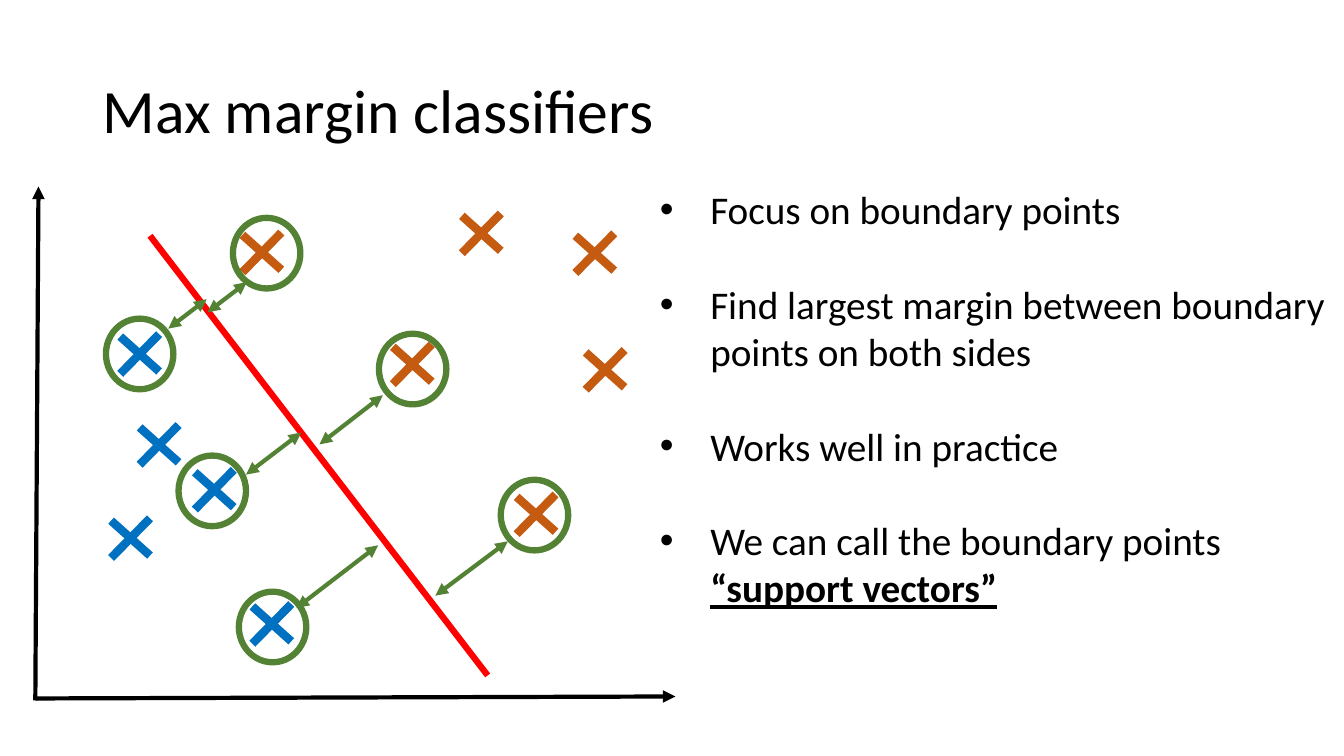
import pptx
import pptx.util
import pptx.dml.color
import pptx.enum.shapes
import pptx.enum.text
import pptx.oxml
import pptx.oxml.ns

Cm, Pt = pptx.util.Cm, pptx.util.Pt
TITLE = "Max margin classifiers"
POINTS = [
    "Focus on boundary points",
    "Find largest margin between boundary points on both sides",
    "Works well in practice",
    "We can call the boundary points",
]
TERM = "“support vectors”"
COLORS = {"ink": "000000", "orange": "C55A11", "blue": "0070C0",
          "green": "548235", "red": "FF0000"}
MARKS = {
    "orange": [(14.99, 6.38), (6.6, 6.36), (10.39, 9.18), (13.51, 12.96),
               (12.13, 5.88), (15.25, 9.32)],
    "blue": [(3.52, 8.92), (3.29, 13.56), (6.85, 15.72), (5.4, 12.34),
             (4.01, 11.21)],
}
RINGS = [(6.02, 14.91), (5.87, 5.49), (4.5, 11.48), (12.62, 12.09),
         (9.55, 8.41), (2.67, 8.03)]
AXES = [(0.89, 17.65, 0.97, 4.7), (0.89, 17.6, 17.02, 17.55)]
BORDER = (3.78, 5.94, 12.29, 17.02)
MARGINS = [(4.24, 8.28, 5.21, 7.54), (7.47, 15.32, 9.53, 13.74),
           (5.23, 7.87, 6.22, 7.11), (6.2, 11.96, 7.59, 10.9),
           (8.05, 11.2, 9.65, 9.96), (10.97, 15.01, 12.8, 13.64)]


def paint(name):
    return pptx.dml.color.RGBColor.from_string(COLORS[name])


def add_line(shapes, ends, color, width, tips=()):
    kind = pptx.enum.shapes.MSO_CONNECTOR.STRAIGHT
    line = shapes.add_connector(kind, *map(Cm, ends))
    line.line.color.rgb = paint(color)
    line.line.width = Pt(width)
    for tip in tips:
        node = pptx.oxml.parse_xml(
            f'<a:{tip} {pptx.oxml.ns.nsdecls("a")} type="triangle"/>')
        line.line._get_or_add_ln().append(node)
    props = line._element.spPr
    props.append(props.makeelement(pptx.oxml.ns.qn("a:effectLst"), {}))


def add_mark(shapes, x, y, color):
    group = shapes.add_group_shape().shapes
    half = 0.49
    add_line(group, (x - half, y - 0.44, x + half, y + 0.44), color, 6)
    add_line(group, (x - half, y + 0.5, x + half, y - 0.5), color, 6)


def add_ring(shapes, x, y):
    kind = pptx.enum.shapes.MSO_SHAPE.OVAL
    ring = shapes.add_shape(kind, Cm(x), Cm(y), Cm(1.7), Cm(1.78))
    ring.shadow.inherit = False
    ring.fill.background()
    ring.line.color.rgb = paint("green")
    ring.line.width = Pt(4.5)


def add_frame(shapes, box):
    frame = shapes.add_textbox(*map(Cm, box)).text_frame
    frame.word_wrap = True
    return frame


def style(para, size):
    para.font.name = "Calibri"
    para.font.size = Pt(size)
    para.font.color.rgb = paint("ink")


def add_title(shapes):
    frame = add_frame(shapes, (2.34, 1.02, 29.21, 3.68))
    frame.vertical_anchor = pptx.enum.text.MSO_ANCHOR.MIDDLE
    para = frame.paragraphs[0]
    para.text = TITLE
    para.line_spacing = 0.9
    style(para, 44)


def add_points(shapes):
    frame = add_frame(shapes, (16.38, 4.55, 17.86, 11.02))
    for i, text in enumerate(POINTS):
        para = frame.add_paragraph() if i else frame.paragraphs[0]
        para.text = text
        para.space_before = Pt(34 if i else 0)
        style(para, 28)
        props = para._p.get_or_add_pPr()
        props.set("marL", str(Cm(1.27)))
        props.set("indent", str(-Cm(1.27)))
        names = pptx.oxml.ns.nsdecls("a")
        bullet = [f'<a:buFont {names} typeface="Arial"/>',
                  f'<a:buChar {names} char="•"/>']
        for at, xml in enumerate(bullet, len(props) - 1):
            props.insert(at, pptx.oxml.parse_xml(xml))
    para.add_line_break()
    run = para.add_run()
    run.text = TERM
    run.font.bold = run.font.underline = True


def main():
    """Build the max margin slide."""
    deck = pptx.Presentation()
    deck.slide_width, deck.slide_height = Cm(33.87), Cm(19.05)
    shapes = deck.slides.add_slide(deck.slide_layouts[6]).shapes
    add_title(shapes)
    for ends in AXES:
        add_line(shapes, ends, "ink", 3, ["tailEnd"])
    for color, spots in MARKS.items():
        for x, y in spots:
            add_mark(shapes, x, y, color)
    add_line(shapes, BORDER, "red", 4.5)
    add_points(shapes)
    for x, y in RINGS:
        add_ring(shapes, x, y)
    for ends in MARGINS:
        add_line(shapes, ends, "green", 3, ["headEnd", "tailEnd"])
    deck.save("out.pptx")


if __name__ == "__main__":
    main()
